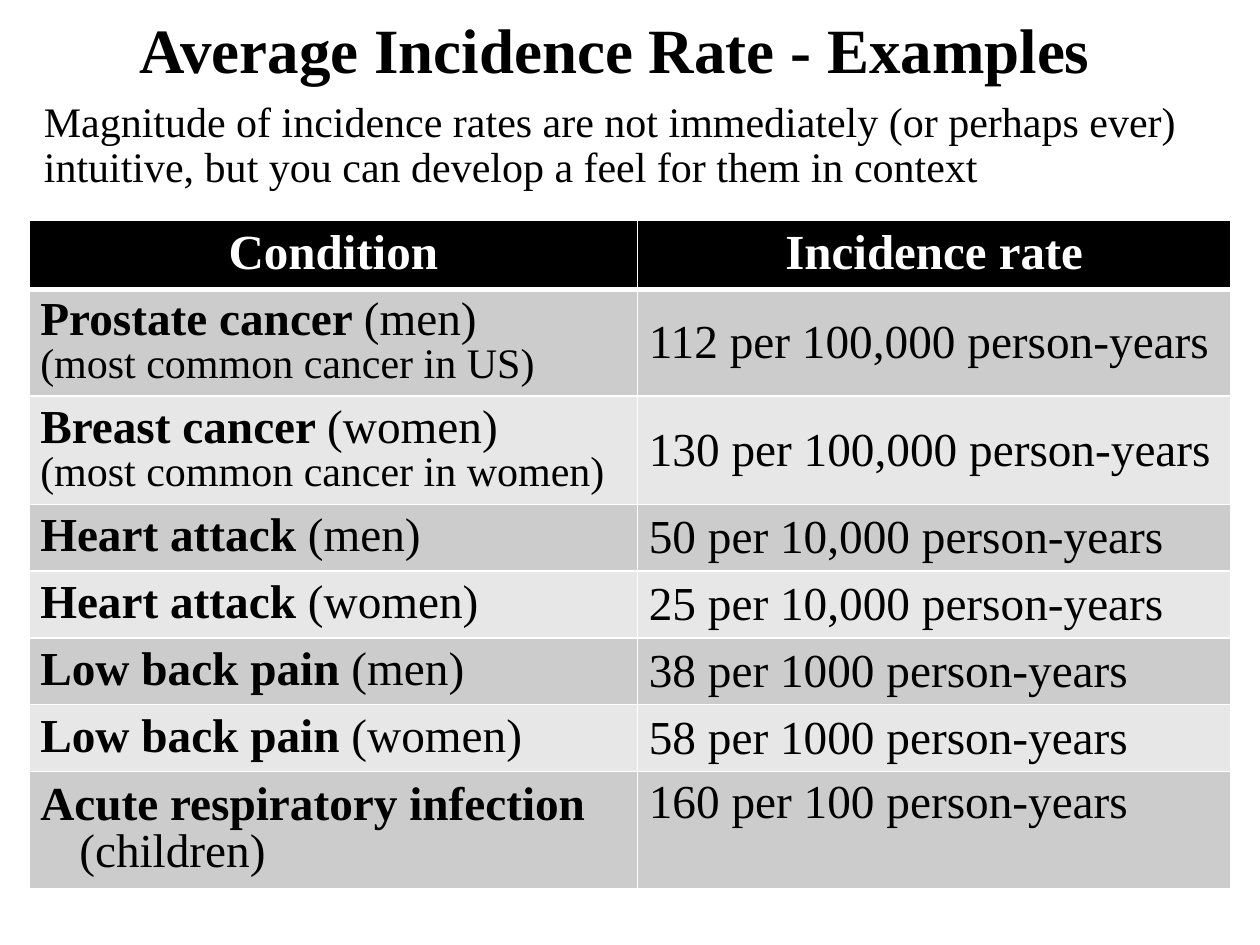
from dataclasses import dataclass

from lxml import etree
from pptx import Presentation
from pptx.dml.color import RGBColor
from pptx.enum.text import MSO_ANCHOR, PP_ALIGN
from pptx.oxml.ns import qn
from pptx.util import Inches, Pt

CENTER, LEFT = PP_ALIGN.CENTER, PP_ALIGN.LEFT
TOP, MIDDLE = MSO_ANCHOR.TOP, MSO_ANCHOR.MIDDLE
TITLE_ONLY = 5


@dataclass(frozen=True)
class Theme:
    font: str = "Times New Roman"
    black: str = "000000"
    white: str = "FFFFFF"
    bands: tuple = ("CCCCCC", "E7E7E7")
    title_size: float = 36
    header_size: float = 28
    cell_size: float = 27
    note_size: float = 24
    tight: float = 0.9


THEME = Theme()
HEADERS = ("Condition", "Incidence rate")
COLUMN_WIDTHS = (4.83, 4.71)
HEADER_HEIGHT = 0.52
CONDITIONS = [
    ("Prostate cancer ", "(men)", "(most common cancer in US)", "112 per 100,000 person-years", 0.81),
    ("Breast cancer ", "(women)", "(most common cancer in women)", "130 per 100,000 person-years", 0.86),
    ("Heart attack ", "(men)", "", "50 per 10,000 person-years", 0.48),
    ("Heart attack ", "(women)", "", "25 per 10,000 person-years", 0.53),
    ("Low back pain ", "(men)", "", "38 per 1000 person-years", 0.52),
    ("Low back pain ", "(women)", "", "58 per 1000 person-years", 0.52),
    ("Acute respiratory infection ", "(children)", "", "160 per 100 person-years", 0.93),
]


def add_run(paragraph, text, size, bold=False, color=THEME.black):
    run = paragraph.add_run()
    run.text = text
    run.font.name = THEME.font
    run.font.size = Pt(size)
    run.font.bold = bold
    run.font.color.rgb = RGBColor.from_string(color)


def set_indent(paragraph, margin, first_line=0):
    properties = paragraph._p.get_or_add_pPr()
    properties.set("marL", str(Inches(margin)))
    properties.set("indent", str(Inches(first_line)))
    paragraph.line_spacing = THEME.tight


def add_border(cell, side, width):
    line = etree.SubElement(cell._tc.get_or_add_tcPr(), qn(f"a:{side}"), w=str(Pt(width)))
    fill = etree.SubElement(line, qn("a:solidFill"))
    etree.SubElement(fill, qn("a:srgbClr"), val=THEME.white)


def style_cell(cell, color, anchor, top_width=1, bottom_width=1):
    widths = {"lnL": 1, "lnR": 1, "lnT": top_width, "lnB": bottom_width}
    for side, width in widths.items():
        add_border(cell, side, width)
    cell.fill.solid()
    cell.fill.fore_color.rgb = RGBColor.from_string(color)
    cell.vertical_anchor = anchor
    cell.margin_left = cell.margin_right = Inches(0.09)
    cell.margin_top = cell.margin_bottom = Inches(0.04)


def fill_condition(cell, name, group, note):
    paragraph = cell.text_frame.paragraphs[0]
    set_indent(paragraph, 0.31, -0.31)
    add_run(paragraph, name, THEME.cell_size, bold=True)
    add_run(paragraph, group, THEME.cell_size)
    if note:
        paragraph = cell.text_frame.add_paragraph()
        set_indent(paragraph, 0.31, -0.31)
        add_run(paragraph, note, THEME.note_size)


def add_title(slide, text):
    title = slide.shapes.title
    title.left, title.top = Inches(0.17), Inches(-0.08)
    title.width, title.height = Inches(9.42), Inches(0.92)
    title.text_frame.vertical_anchor = MIDDLE
    paragraph = title.text_frame.paragraphs[0]
    paragraph.alignment = CENTER
    add_run(paragraph, text, THEME.title_size, bold=True)


def add_introduction(slide, text):
    box = slide.shapes.add_textbox(Inches(-0.25), Inches(0.75), Inches(10.25), Inches(0.92))
    box.text_frame.word_wrap = True
    paragraph = box.text_frame.paragraphs[0]
    set_indent(paragraph, 0.5)
    paragraph.space_before = Pt(0.2 * THEME.note_size)
    add_run(paragraph, text, THEME.note_size)


def add_rate_table(slide):
    heights = [HEADER_HEIGHT] + [row[-1] for row in CONDITIONS]
    table = slide.shapes.add_table(
        len(heights), len(HEADERS), Inches(0.23), Inches(1.75),
        Inches(sum(COLUMN_WIDTHS)), Inches(sum(heights)),
    ).table
    for column, width in zip(table.columns, COLUMN_WIDTHS):
        column.width = Inches(width)
    for row, height in zip(table.rows, heights):
        row.height = Inches(height)

    for index, text in enumerate(HEADERS):
        cell = table.cell(0, index)
        style_cell(cell, THEME.black, TOP, bottom_width=3)
        paragraph = cell.text_frame.paragraphs[0]
        paragraph.alignment = CENTER
        add_run(paragraph, text, THEME.header_size, bold=True, color=THEME.white)

    for index, (name, group, note, rate, _) in enumerate(CONDITIONS, start=1):
        color = THEME.bands[(index - 1) % 2]
        top_width = 3 if index == 1 else 1
        rate_anchor = TOP if index == len(CONDITIONS) else MIDDLE
        condition_cell, rate_cell = table.cell(index, 0), table.cell(index, 1)
        style_cell(condition_cell, color, MIDDLE, top_width)
        style_cell(rate_cell, color, rate_anchor, top_width)
        fill_condition(condition_cell, name, group, note)
        paragraph = rate_cell.text_frame.paragraphs[0]
        paragraph.alignment = LEFT
        add_run(paragraph, rate, THEME.cell_size)


def main():
    presentation = Presentation()
    presentation.slide_width, presentation.slide_height = Inches(10), Inches(7.5)
    slide = presentation.slides.add_slide(presentation.slide_layouts[TITLE_ONLY])
    add_title(slide, "Average Incidence Rate - Examples")
    add_introduction(
        slide,
        "Magnitude of incidence rates are not immediately (or perhaps ever) "
        "intuitive, but you can develop a feel for them in context",
    )
    add_rate_table(slide)
    presentation.save("out.pptx")


if __name__ == "__main__":
    main()
